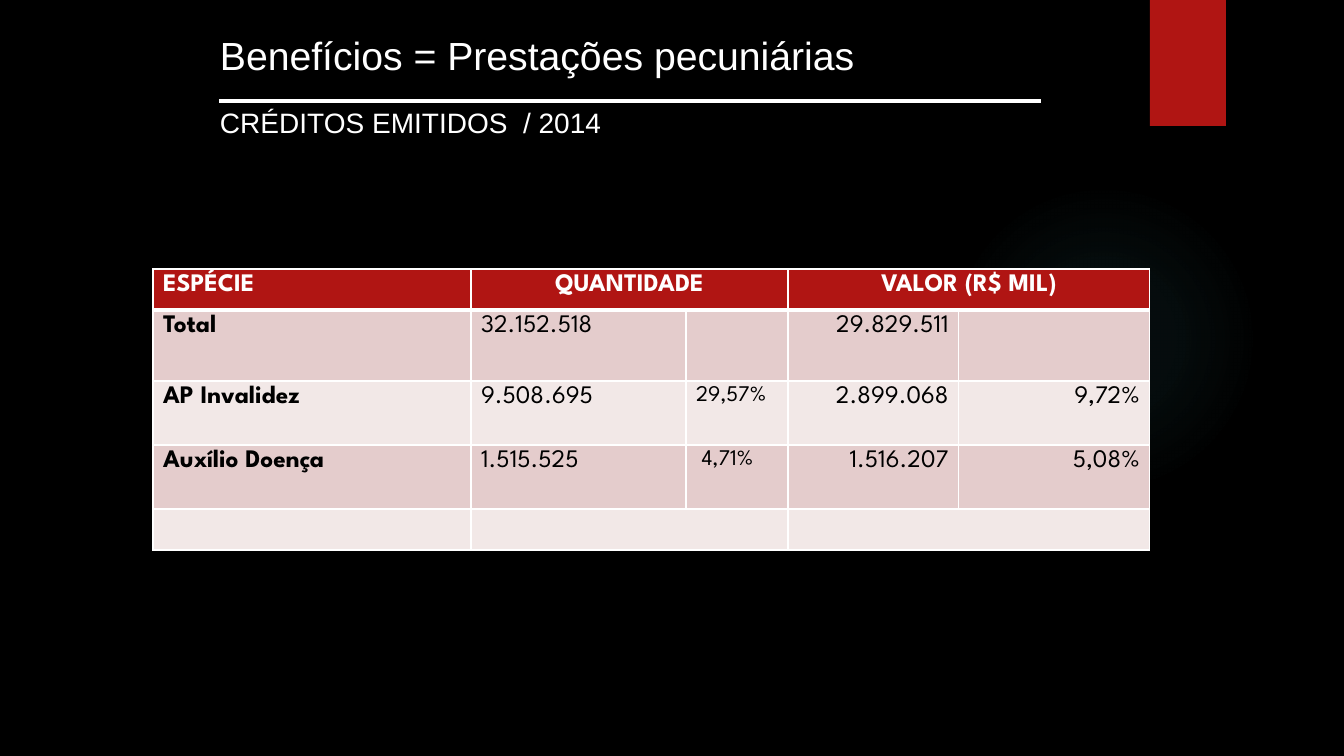
from lxml import etree
from pptx import Presentation
from pptx.dml.color import RGBColor
from pptx.enum.shapes import MSO_CONNECTOR, MSO_SHAPE
from pptx.enum.text import MSO_ANCHOR, PP_ALIGN
from pptx.oxml import parse_xml
from pptx.oxml.ns import nsdecls, qn
from pptx.util import Emu, Pt

LEFT, CENTER, RIGHT = PP_ALIGN.LEFT, PP_ALIGN.CENTER, PP_ALIGN.RIGHT
MIDDLE = MSO_ANCHOR.MIDDLE
RECT, OVAL = MSO_SHAPE.RECTANGLE, MSO_SHAPE.OVAL
STRAIGHT = MSO_CONNECTOR.STRAIGHT

COLORS = {"black": "000000", "white": "FFFFFF", "red": "B01513",
          "glow": "50B9C1", "odd": "E4CCCC", "even": "F2E8E7"}
HEADING_FONT, TABLE_FONT = "Arial", "League Spartan"

HEADINGS = [
    ("Benefícios = Prestações pecuniárias", 28, (210, 26, 755, 58)),
    ("CRÉDITOS EMITIDOS  / 2014", 20, (210, 100, 655, 44)),
]
GLOW_STOPS = [(0, 7), (36, 6), (69, 0)]
ROWS = [
    ["ESPÉCIE", "QUANTIDADE", "", "VALOR (R$ MIL)", ""],
    ["Total", "32.152.518", "", "29.829.511", ""],
    ["AP Invalidez", "9.508.695", "29,57%", "2.899.068", "9,72%"],
    ["Auxílio Doença", "1.515.525", " 4,71%", "1.516.207", "5,08%"],
    ["", "", "", "", ""],
]
COL_WIDTHS = [318, 215, 102, 171, 191]
ROW_HEIGHTS = [41, 71, 64, 64, 41]
HEADER_ALIGN = [LEFT, CENTER, CENTER, CENTER, CENTER]
BODY_ALIGN = [LEFT, LEFT, LEFT, RIGHT, RIGHT]
SHARE_COL = 2
MERGED_ROWS, MERGED_COLS = (0, len(ROWS) - 1), (1, 3)


def px(n):
    return Emu(round(n * 914400 / 100.8))


def rgb(name):
    return RGBColor.from_string(COLORS[name])


def add_run(p, text, size, font, color, bold=False):
    r = p.add_run()
    r.text = text
    r.font.size = Pt(size)
    r.font.name = font
    r.font.bold = bold
    r.font.color.rgb = rgb(color)


def add_plain_shape(s, kind, box):
    sp = s.shapes.add_shape(kind, *map(px, box))
    sp.line.fill.background()
    sp.shadow.inherit = False
    return sp


def add_glow(s):
    sp = add_plain_shape(s, OVAL, (949, 184, 310, 310))
    stops = "".join(
        f'<a:gs pos="{pos * 1000}"><a:srgbClr val="{COLORS["glow"]}">'
        f'<a:alpha val="{alpha * 1000}"/></a:srgbClr></a:gs>'
        for pos, alpha in GLOW_STOPS)
    sp._element.spPr.find(qn("a:prstGeom")).addnext(parse_xml(
        f'<a:gradFill {nsdecls("a")}><a:gsLst>{stops}</a:gsLst>'
        '<a:path path="circle"><a:fillToRect l="50000" t="50000" '
        'r="50000" b="50000"/></a:path></a:gradFill>'))


def add_heading(s, text, size, box):
    tf = s.shapes.add_textbox(*map(px, box)).text_frame
    tf.word_wrap = True
    tf.vertical_anchor = MIDDLE
    add_run(tf.paragraphs[0], text, size, HEADING_FONT, "white")


def add_rule(s):
    line = s.shapes.add_connector(STRAIGHT, px(219), px(101), px(1041), px(101))
    line.line.color.rgb = rgb("white")
    line.line.width = Pt(3)
    etree.SubElement(line._element.spPr, qn("a:effectLst"))


def set_borders(cell, bottom):
    tc_pr = cell._tc.get_or_add_tcPr()
    for side, width in (("L", 1), ("R", 1), ("T", 1), ("B", bottom)):
        tc_pr.append(parse_xml(
            f'<a:ln{side} {nsdecls("a")} w="{Pt(width)}"><a:solidFill>'
            f'<a:srgbClr val="{COLORS["white"]}"/></a:solidFill></a:ln{side}>'))


def fill_cell(cell, text, row, col):
    header = row == 0
    set_borders(cell, 3 if header else 1)
    cell.fill.solid()
    cell.fill.fore_color.rgb = rgb("red" if header else "odd" if row % 2 else "even")
    p = cell.text_frame.paragraphs[0]
    p.alignment = (HEADER_ALIGN if header else BODY_ALIGN)[col]
    if text:
        size = 16 if col == SHARE_COL else 18
        add_run(p, text, size, TABLE_FONT, "white" if header else "black",
                header or col == 0)


def add_benefits_table(s):
    table = s.shapes.add_table(
        len(ROWS), len(COL_WIDTHS), px(153), px(269),
        px(sum(COL_WIDTHS)), px(sum(ROW_HEIGHTS))).table
    for column, width in zip(table.columns, COL_WIDTHS):
        column.width = px(width)
    for row, height in zip(table.rows, ROW_HEIGHTS):
        row.height = px(height)
    for i, values in enumerate(ROWS):
        for j, text in enumerate(values):
            fill_cell(table.cell(i, j), text, i, j)
    for i in MERGED_ROWS:
        for j in MERGED_COLS:
            table.cell(i, j).merge(table.cell(i, j + 1))


def main():
    prs = Presentation()
    prs.slide_width, prs.slide_height = px(1344), px(756)
    s = prs.slides.add_slide(prs.slide_layouts[6])
    s.background.fill.solid()
    s.background.fill.fore_color.rgb = rgb("black")
    add_glow(s)
    tab = add_plain_shape(s, RECT, (1150, 0, 76, 126))
    tab.fill.solid()
    tab.fill.fore_color.rgb = rgb("red")
    for heading in HEADINGS:
        add_heading(s, *heading)
    add_rule(s)
    add_benefits_table(s)
    prs.save("out.pptx")


if __name__ == "__main__":
    main()
